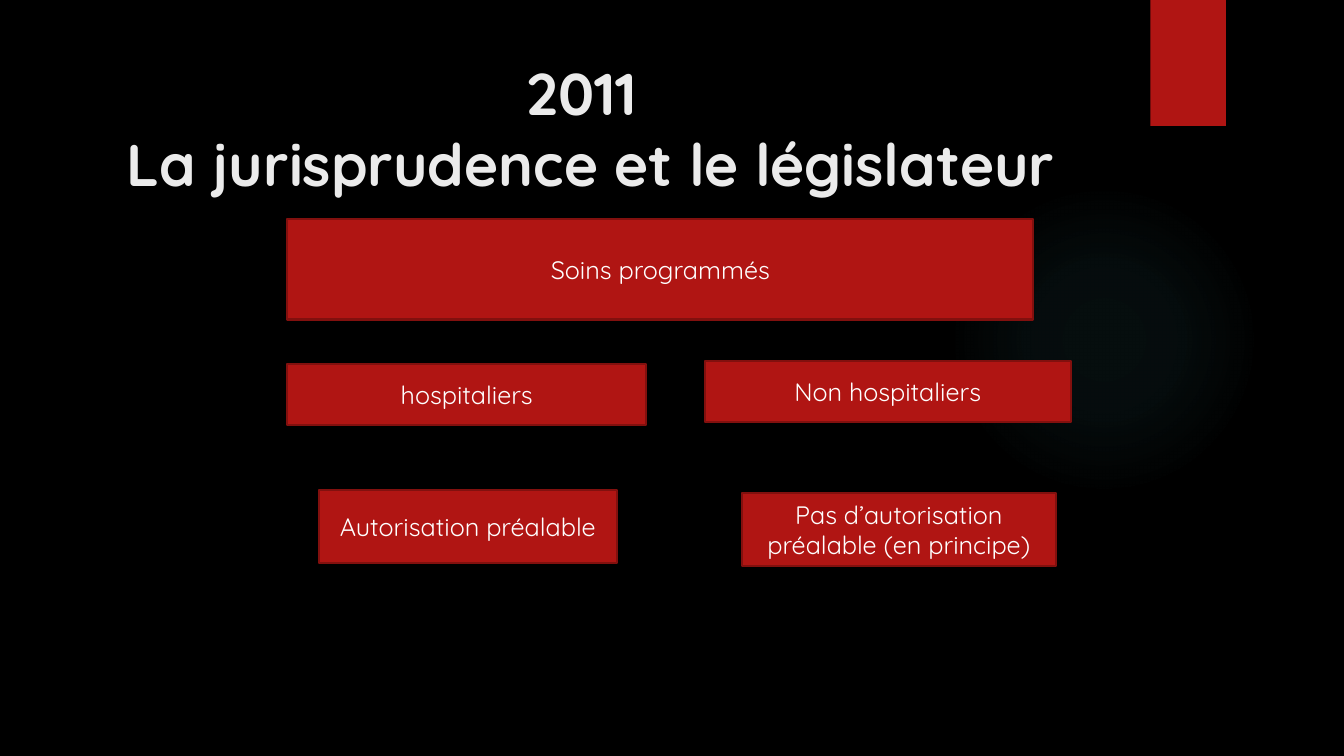
from lxml.etree import fromstring
from pptx import Presentation
from pptx.dml.color import RGBColor
from pptx.enum.shapes import MSO_SHAPE
from pptx.enum.text import MSO_ANCHOR, PP_ALIGN
from pptx.oxml.ns import nsdecls
from pptx.util import Inches, Pt

COLORS = {
    "background": "000000",
    "red": "B01513",
    "border": "82100E",
    "title": "EBEBEB",
    "text": "FFFFFF",
    "glow": "50B9C1",
}
FONT = "Quicksand"
TITLE_LINES = ["2011 ", "La jurisprudence et le législateur"]
TITLE_AREA = (0.71, 0.5, 10.29, 1.53)
GLOW_AREA = (9.41, 1.83, 3.08, 3.08)
GLOW_STOPS = [(0, 7), (36, 6), (69, 0)]  # position and opacity, in percent
RIBBON_AREA = (11.41, 0, 0.75, 1.25)
BOXES = [  # text, (left, top, width, height)
    ("Soins programmés", (2.85, 2.17, 7.4, 1)),
    ("Autorisation préalable", (3.16, 4.86, 2.96, 0.73)),
    ("hospitaliers", (2.85, 3.61, 3.56, 0.61)),
    ("Non hospitaliers", (6.99, 3.58, 3.63, 0.61)),
    ("Pas d’autorisation préalable (en principe)", (7.36, 4.89, 3.11, 0.73)),
]


def color(name):
    return RGBColor.from_string(COLORS[name])


def add_filled_shape(slide, kind, area, fill, line=None):
    shape = slide.shapes.add_shape(kind, *map(Inches, area))
    shape.shadow.inherit = False
    shape.fill.solid()
    shape.fill.fore_color.rgb = color(fill)
    if line:
        shape.line.color.rgb = color(line)
        shape.line.width = Pt(1.5)
    else:
        shape.line.fill.background()
    return shape


def write_centered(shape, lines, size, color_name, bold=False):
    frame = shape.text_frame
    frame.word_wrap = True
    frame.vertical_anchor = MSO_ANCHOR.MIDDLE
    paragraph = frame.paragraphs[0]
    paragraph.alignment = PP_ALIGN.CENTER
    for index, line in enumerate(lines):
        if index:
            paragraph.add_line_break()
        run = paragraph.add_run()
        run.text = line
        run.font.name = FONT
        run.font.size = Pt(size)
        run.font.bold = bold
        run.font.color.rgb = color(color_name)


def add_glow(slide):
    """Add a circle that fades out from its centre."""
    glow = add_filled_shape(slide, MSO_SHAPE.OVAL, GLOW_AREA, "glow")
    stops = "".join(
        f'<a:gs pos="{position * 1000}"><a:srgbClr val="{COLORS["glow"]}">'
        f'<a:alpha val="{opacity * 1000}"/></a:srgbClr></a:gs>'
        for position, opacity in GLOW_STOPS
    )
    gradient = fromstring(
        f'<a:gradFill {nsdecls("a")} rotWithShape="1"><a:gsLst>{stops}</a:gsLst>'
        '<a:path path="circle"><a:fillToRect l="50000" t="50000" r="50000" b="50000"/>'
        "</a:path></a:gradFill>"
    )
    properties = glow.element.spPr
    properties.replace(properties.find("{*}solidFill"), gradient)


def main():
    presentation = Presentation()
    presentation.slide_width = Inches(13.33)
    presentation.slide_height = Inches(7.5)
    slide = presentation.slides.add_slide(presentation.slide_layouts[6])
    slide.background.fill.solid()
    slide.background.fill.fore_color.rgb = color("background")

    add_glow(slide)
    add_filled_shape(slide, MSO_SHAPE.RECTANGLE, RIBBON_AREA, "red")
    title = slide.shapes.add_textbox(*map(Inches, TITLE_AREA))
    write_centered(title, TITLE_LINES, 42, "title", bold=True)
    for text, area in BOXES:
        box = add_filled_shape(slide, MSO_SHAPE.RECTANGLE, area, "red", "border")
        write_centered(box, [text], 18, "text")

    presentation.save("out.pptx")


if __name__ == "__main__":
    main()
